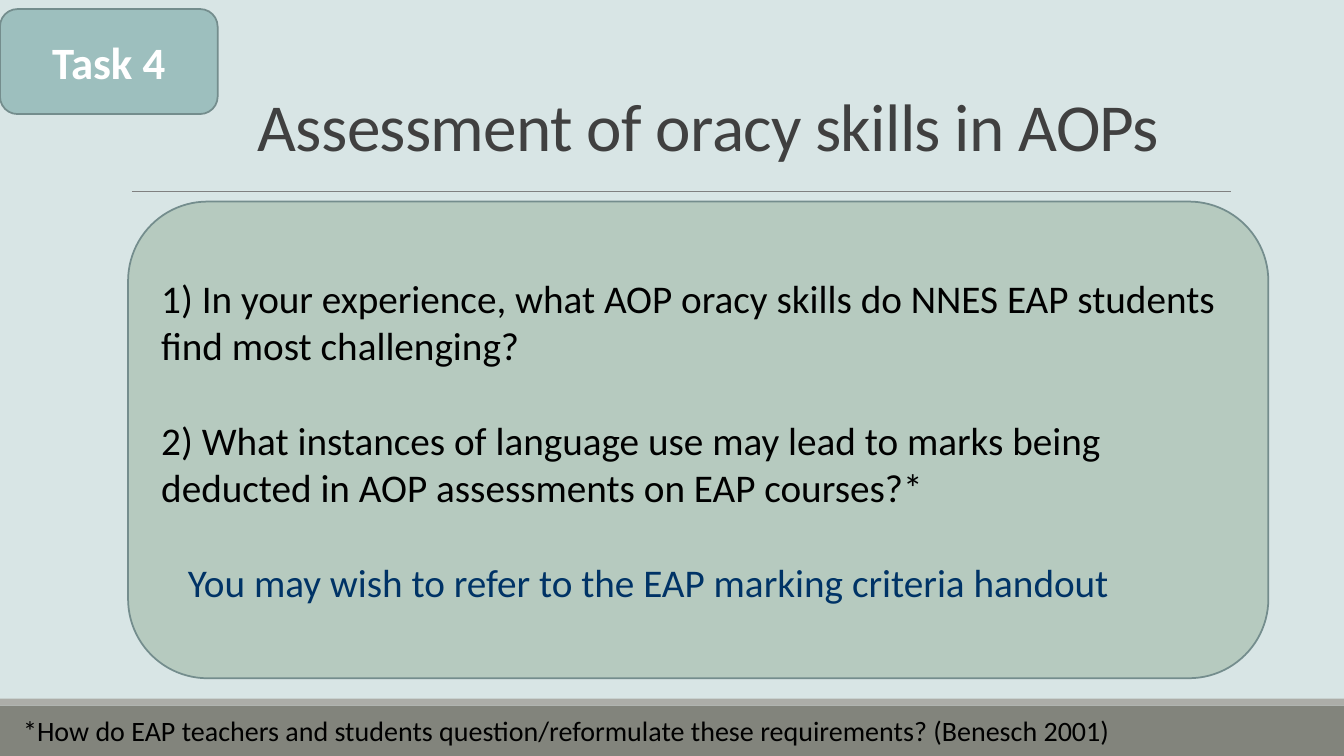
"""Build the Task 4 slide on assessing oracy skills."""
from dataclasses import dataclass, field
from typing import Any, Optional

from lxml.etree import SubElement as Sub
from pptx import Presentation as Deck
from pptx.dml.color import RGBColor as Rgb
from pptx.enum.shapes import MSO_CONNECTOR as Link, MSO_SHAPE as Geo
from pptx.enum.text import MSO_ANCHOR as Anchor, PP_ALIGN as Align
from pptx.oxml.ns import qn
from pptx.util import Pt


@dataclass(frozen=True)
class Theme:
    font: str = "Calibri"
    back: str = "D8E5E5"
    foot: str = "82847C"
    strip: str = "ACADA8"
    rule: str = "808080"
    card: str = "B6CABF"
    badge: str = "9DBFBE"
    edge: str = "748D8D"
    head: str = "404040"
    ink: str = "000000"
    navy: str = "003366"
    white: str = "FFFFFF"
    title: float = 48
    label: float = 32
    body: float = 28
    note: float = 20


THEME = Theme()


@dataclass(frozen=True)
class Para:
    text: str
    size: float
    color: str = THEME.ink
    bold: bool = False
    track: float = 0
    inset: float = 0
    form: dict[str, Any] = field(default_factory=dict)


@dataclass(frozen=True)
class Box:
    left: float
    top: float
    width: float
    height: float
    geo: Optional[Geo] = None
    fill: str = ""
    edge: str = ""
    anchor: Anchor = Anchor.TOP
    paras: tuple[Para, ...] = ()


WIDE, TALL = 960, 540
GAP = {"space_after": Pt(34.2)}
LEFT = {"alignment": Align.LEFT}
BOXES = (
    Box(0, 504, WIDE, 36, Geo.RECTANGLE, THEME.foot),
    Box(0, 499, WIDE, 5, Geo.RECTANGLE, THEME.strip),
    Box(177.1, 13, 782.6, 108.7, anchor=Anchor.BOTTOM, paras=(
        Para("Assessment of oracy skills in AOPs", THEME.title, THEME.head,
             track=-0.5, form=LEFT | {"line_spacing": 0.85}),
    )),
    Box(91.5, 144, 814.5, 340.5, Geo.ROUNDED_RECTANGLE, THEME.card,
        THEME.edge, Anchor.MIDDLE, (
            Para("1) In your experience, what AOP oracy skills do NNES EAP "
                 "students find most challenging?", THEME.body,
                 form=LEFT | GAP),
            Para("2) What instances of language use may lead to marks being "
                 "deducted in AOP assessments on EAP courses?*", THEME.body,
                 form=LEFT | GAP),
            Para("You may wish to refer to the EAP marking criteria handout",
                 THEME.body, THEME.navy, inset=19, form=LEFT),
        )),
    Box(0, 6.5, 155.5, 75, Geo.ROUNDED_RECTANGLE, THEME.badge, THEME.edge,
        Anchor.MIDDLE, (
            Para("Task 4", THEME.label, THEME.white, True,
                 form={"alignment": Align.CENTER}),
        )),
    Box(9.4, 506.2, 950, 31.5, paras=(
        Para("*How do EAP teachers and students question/reformulate these "
             "requirements? (Benesch 2001)", THEME.note, form=LEFT),
    )),
)


def apply(item: Any, form: dict[str, Any]) -> None:
    """Set each named value on the item."""
    for name, value in form.items():
        setattr(item, name, value)


def write(para: Any, data: Para) -> None:
    """Fill one paragraph with its styled text."""
    apply(para, data.form)
    if data.inset:
        para._p.get_or_add_pPr().set("marL", str(Pt(data.inset)))
    run = para.add_run()
    run.text = data.text
    apply(run.font, {"name": THEME.font, "size": Pt(data.size),
                     "bold": data.bold})
    run.font.color.rgb = Rgb.from_string(data.color)
    if data.track:
        run._r.get_or_add_rPr().set("spc", str(round(data.track * 100)))


def draw(slide: Any, box: Box) -> None:
    """Draw one shape or text box."""
    area = [Pt(v) for v in (box.left, box.top, box.width, box.height)]
    if box.geo is None:
        shape = slide.shapes.add_textbox(*area)
    else:
        shape = slide.shapes.add_shape(box.geo, *area)
        shape.shadow.inherit = False
        shape.fill.solid()
        shape.fill.fore_color.rgb = Rgb.from_string(box.fill)
        if box.edge:
            shape.line.color.rgb = Rgb.from_string(box.edge)
            shape.line.width = Pt(1.25)
        else:
            shape.line.fill.background()
    frame = shape.text_frame
    apply(frame, {"word_wrap": True, "vertical_anchor": box.anchor})
    for i, data in enumerate(box.paras):
        write(frame.add_paragraph() if i else frame.paragraphs[0], data)


def rule(slide: Any, left: float, right: float, top: float) -> None:
    """Draw the thin line under the title."""
    line = slide.shapes.add_connector(
        Link.STRAIGHT, Pt(left), Pt(top), Pt(right), Pt(top))
    line.line.color.rgb = Rgb.from_string(THEME.rule)
    line.line.width = Pt(0.5)
    Sub(line._element.spPr, qn("a:effectLst"))


def main() -> None:
    """Build and save the slide."""
    deck = Deck()
    apply(deck, {"slide_width": Pt(WIDE), "slide_height": Pt(TALL)})
    slide = deck.slides.add_slide(deck.slide_layouts[6])
    back = slide.background.fill
    back.solid()
    back.fore_color.rgb = Rgb.from_string(THEME.back)
    rule(slide, 94.3, 879, 136.8)
    for box in BOXES:
        draw(slide, box)
    deck.save("out.pptx")


if __name__ == "__main__":
    main()
